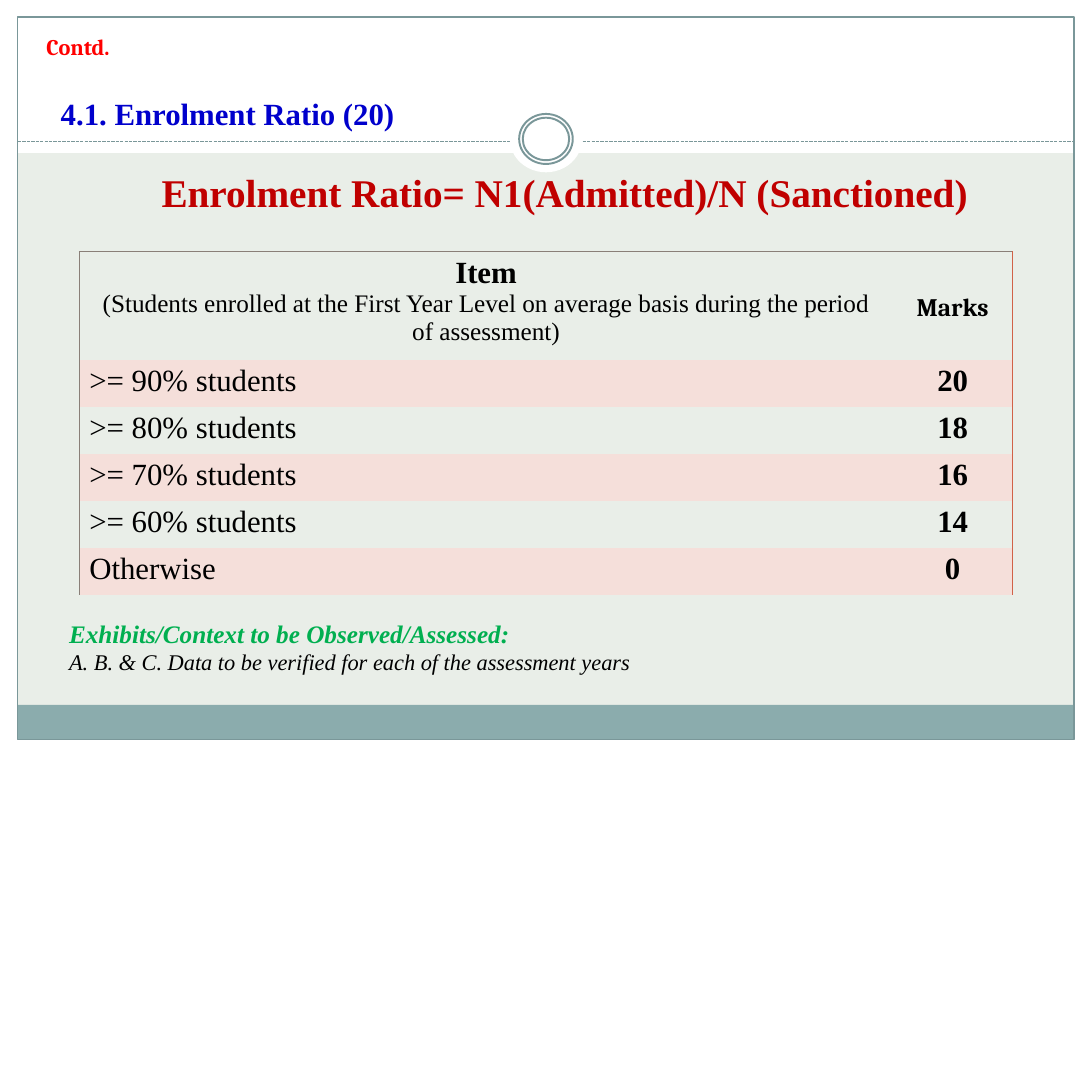
from dataclasses import dataclass

from pptx import Presentation
from pptx.dml.color import RGBColor
from pptx.enum.dml import MSO_LINE_DASH_STYLE as Dash
from pptx.enum.shapes import MSO_CONNECTOR as Connector, MSO_SHAPE as Shape
from pptx.enum.text import MSO_ANCHOR as Anchor, PP_ALIGN as Align
from pptx.oxml.ns import qn
from pptx.oxml.xmlchemy import OxmlElement
from pptx.util import Cm, Pt


@dataclass(frozen=True)
class Theme:
    serif: str = "Times New Roman"
    accent_font: str = "Cambria"
    white: str = "FFFFFF"
    black: str = "000000"
    panel: str = "E9EEE8"
    band: str = "F5DFDA"
    teal: str = "7A9799"
    footer: str = "8BACAD"
    rust: str = "D16248"
    edge: str = "8A7F78"
    red: str = "FF0000"
    blue: str = "0000CC"
    crimson: str = "C00000"
    green: str = "00AF50"
    formula: int = 28
    heading: int = 22
    body: int = 18
    small: int = 16


THEME = Theme()
HAIRLINE = 0.78

ROWS = [
    (">= 90% students", "20"),
    (">= 80% students", "18"),
    (">= 70% students", "16"),
    (">= 60% students", "14"),
    ("Otherwise", "0"),
]


def color(value):
    return RGBColor.from_string(value)


def write(frame, lines, align=Align.LEFT):
    """Fill a text frame with (text, size, format values) lines."""
    for index, (text, size, values) in enumerate(lines):
        paragraph = frame.paragraphs[0] if index == 0 else frame.add_paragraph()
        paragraph.alignment = align
        run = paragraph.add_run()
        run.text = text
        formats = {"name": THEME.serif, "size": Pt(size), "bold": False, **values}
        run.font.color.rgb = color(formats.pop("color", THEME.black))
        for name, value in formats.items():
            setattr(run.font, name, value)


def add_shape(slide, kind, box, fill=None, line=None, weight=HAIRLINE):
    shape = slide.shapes.add_shape(kind, *(Cm(length) for length in box))
    shape.shadow.inherit = False
    if fill:
        shape.fill.solid()
        shape.fill.fore_color.rgb = color(fill)
    else:
        shape.fill.background()
    if line:
        shape.line.color.rgb = color(line)
        shape.line.width = Pt(weight)
    else:
        shape.line.fill.background()


def add_text(slide, box, lines):
    frame = slide.shapes.add_textbox(*(Cm(length) for length in box)).text_frame
    frame.word_wrap = True
    for side in ("left", "top", "right", "bottom"):
        setattr(frame, f"margin_{side}", Cm(0.04))
    write(frame, lines)


def draw_frame(slide, box):
    """Panel, footer band, outline, dashed rule and ring emblem."""
    left, top, width, height = box
    header, footer = 3.43, 0.87
    bottom = top + height
    add_shape(slide, Shape.RECTANGLE,
              (left, top + header, width, height - header - footer), THEME.panel)
    add_shape(slide, Shape.RECTANGLE,
              (left, bottom - footer, width, footer), THEME.footer)
    add_shape(slide, Shape.RECTANGLE, box, line=THEME.teal)

    rule_y = Cm(top + 3.13)
    rule = slide.shapes.add_connector(
        Connector.STRAIGHT, Cm(left), rule_y, Cm(left + width), rule_y)
    rule.line.color.rgb = color(THEME.teal)
    rule.line.width = Pt(HAIRLINE)
    rule.line.dash_style = Dash.SQUARE_DOT
    rule._element.spPr.append(OxmlElement("a:effectLst"))

    # Concentric rings on a white disc
    center_x, center_y = left + width / 2, top + 3.07
    rings = [(1.82, 1.68, None), (1.35, 1.26, THEME.teal), (1.17, 1.07, THEME.teal)]
    for ring_width, ring_height, line in rings:
        add_shape(slide, Shape.OVAL,
                  (center_x - ring_width / 2, center_y - ring_height / 2,
                   ring_width, ring_height), THEME.white, line, 1.4)


def draw_headings(slide, box):
    left, top, width, height = box
    add_text(slide, (left + 0.68, top + 0.36, 3, 0.76),
             [("Contd.", THEME.small,
               {"name": THEME.accent_font, "bold": True, "color": THEME.red})])
    add_text(slide, (left + 1.04, top + 1.92, 9, 1.02),
             [("4.1. Enrolment Ratio (20)", THEME.heading,
               {"bold": True, "color": THEME.blue})])
    add_text(slide, (left + 3.58, top + 3.78, 21, 1.27),
             [("Enrolment Ratio= N1(Admitted)/N (Sanctioned)", THEME.formula,
               {"bold": True, "color": THEME.crimson})])


def set_borders(cell, colors):
    """Put the left, right, top and bottom lines ahead of the cell fill."""
    properties = cell._tc.get_or_add_tcPr()
    for index, (side, value) in enumerate(zip("LRTB", colors)):
        line = OxmlElement(f"a:ln{side}")
        line.set("w", str(Pt(1)))
        fill = OxmlElement("a:solidFill" if value else "a:noFill")
        if value:
            tint = OxmlElement("a:srgbClr")
            tint.set("val", value)
            fill.append(tint)
        line.append(fill)
        properties.insert(index, line)


def draw_marks_table(slide, box):
    left, top, width, height = box
    row_height = 1.185
    marks_width = 3.02
    graphic = slide.shapes.add_table(
        len(ROWS) + 1, 2, *(Cm(length) for length in box))
    table = graphic.table
    table.first_row = table.horz_banding = False
    table._tbl.tblPr.find(qn("a:tableStyleId")).text = \
        "{2D5ABB26-0587-4C30-8999-92F81FD0307C}"
    table.columns[0].width = Cm(width - marks_width)
    table.columns[1].width = Cm(marks_width)
    for index, row in enumerate(table.rows):
        row.height = Cm(row_height if index else height - row_height * len(ROWS))

    header = [
        [("Item", THEME.heading, {"bold": True}),
         ("(Students enrolled at the First Year Level on average basis during "
          "the period of assessment)", THEME.body, {})],
        [("Marks", THEME.body, {"name": THEME.accent_font, "bold": True})],
    ]
    body = [[[(label, THEME.heading, {})], [(marks, THEME.heading, {"bold": True})]]
            for label, marks in ROWS]
    for row, contents in enumerate([header] + body):
        for column, lines in enumerate(contents):
            cell = table.cell(row, column)
            side = 0 if column else 0.25 if row else 0.5
            margins = {"left": side, "right": side, "top": 0.1, "bottom": 0}
            for name, value in margins.items():
                setattr(cell, f"margin_{name}", Cm(value))
            cell.fill.solid()
            cell.fill.fore_color.rgb = color(THEME.band if row % 2 else THEME.panel)
            set_borders(cell, (None if column else THEME.edge,
                               THEME.rust if column else None,
                               None if row else THEME.edge, None))
            write(cell.text_frame, lines,
                  Align.CENTER if column or not row else Align.LEFT)
    table.cell(0, 1).vertical_anchor = Anchor.MIDDLE


def draw_exhibits(slide, box):
    add_text(slide, box, [
        ("Exhibits/Context to be Observed/Assessed:", THEME.body,
         {"bold": True, "italic": True, "color": THEME.green}),
        ("A. B. & C. Data to be verified for each of the assessment years",
         THEME.small, {"italic": True}),
    ])


def main():
    presentation = Presentation()
    presentation.slide_width = presentation.slide_height = Cm(27.5)
    slide = presentation.slides.add_slide(presentation.slide_layouts[6])
    frame = (0.45, 0.43, 26.6, 18.19)
    draw_frame(slide, frame)
    draw_headings(slide, frame)
    draw_marks_table(slide, (2, 6.34, 23.5, 8.65))
    draw_exhibits(slide, (1.7, 15.52, 15, 1.52))
    presentation.save("out.pptx")


if __name__ == "__main__":
    main()
